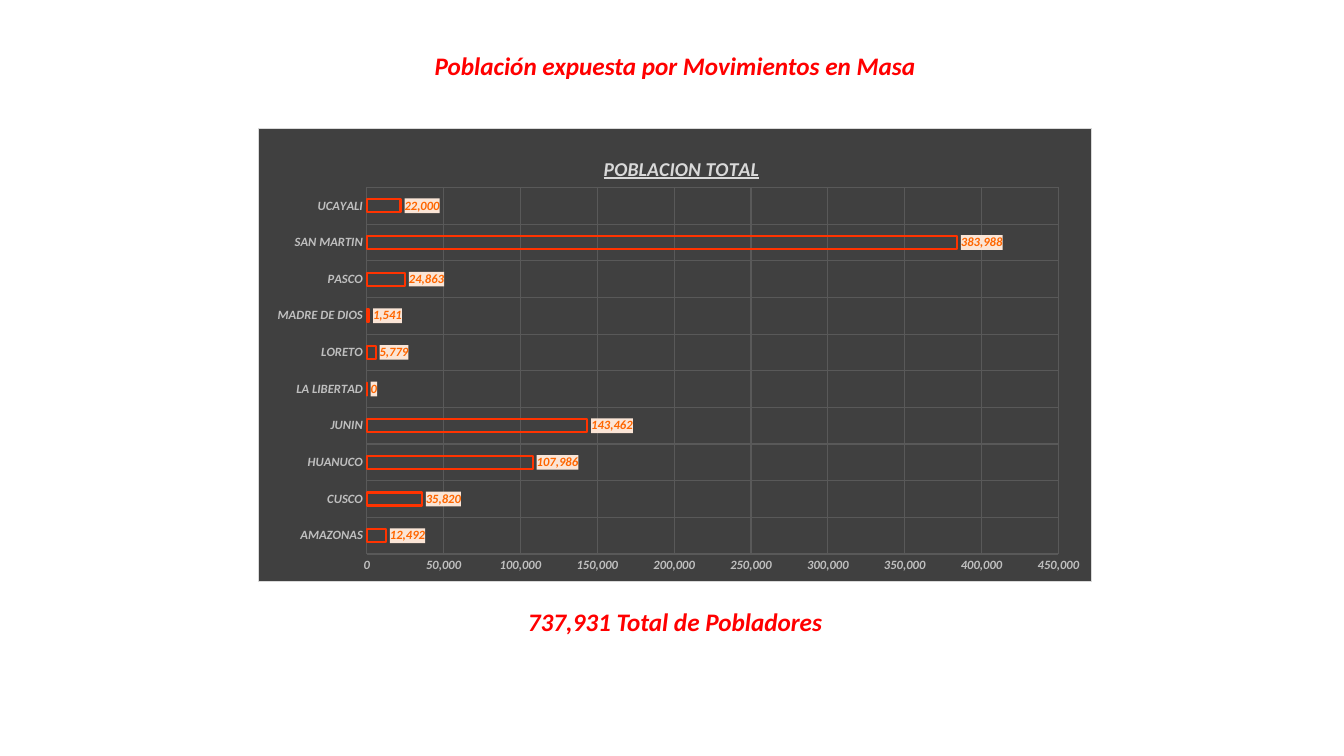
from dataclasses import dataclass

from pptx import Presentation
from pptx.chart.data import CategoryChartData
from pptx.dml.color import RGBColor
from pptx.enum.chart import XL_CHART_TYPE, XL_LABEL_POSITION, XL_TICK_MARK
from pptx.enum.text import MSO_ANCHOR, PP_ALIGN
from pptx.oxml import parse_xml
from pptx.oxml.ns import nsdecls, qn
from pptx.util import Cm, Pt


@dataclass(frozen=True)
class Theme:
    font: str = "Calibri"
    heading: str = "FF0000"
    panel: str = "404040"
    border: str = "D9D9D9"
    grid: str = "595959"
    axis: str = "BFBFBF"
    bar: str = "FF3300"
    label: str = "FF6600"
    label_fill: str = "FBE5D6"
    heading_size: float = 18
    title_size: float = 14
    small_size: float = 9


THEME = Theme()
POPULATION = {
    "AMAZONAS": 12492,
    "CUSCO": 35820,
    "HUANUCO": 107986,
    "JUNIN": 143462,
    "LA LIBERTAD": 0,
    "LORETO": 5779,
    "MADRE DE DIOS": 1541,
    "PASCO": 24863,
    "SAN MARTIN": 383988,
    "UCAYALI": 22000,
}


def style_font(font, size, color):
    font.name = THEME.font
    font.size = Pt(size)
    font.bold = font.italic = True
    font.color.rgb = RGBColor.from_string(color)


def style_line(line, color, width):
    line.color.rgb = RGBColor.from_string(color)
    line.width = Pt(width)


def add_heading(s, text, left, top, width, height):
    tf = s.shapes.add_textbox(left, top, width, height).text_frame
    tf.word_wrap = True
    tf.vertical_anchor = MSO_ANCHOR.MIDDLE
    p = tf.paragraphs[0]
    p.text = text
    p.alignment = PP_ALIGN.CENTER
    style_font(p.runs[0].font, THEME.heading_size, THEME.heading)


def box_properties(fill, border=None):
    """Build the c:spPr of a chart part that has no public fill."""
    line = "<a:ln><a:noFill/></a:ln>"
    if border:
        line = (f'<a:ln w="{Pt(0.75)}"><a:solidFill><a:srgbClr val="{border}"/>'
                "</a:solidFill></a:ln>")
    return parse_xml(
        f'<c:spPr {nsdecls("c", "a")}><a:solidFill><a:srgbClr val="{fill}"/>'
        f"</a:solidFill>{line}</c:spPr>")


def manual_layout(inner=False, **fractions):
    target = '<c:layoutTarget val="inner"/>' if inner else ""
    modes = "".join(f'<c:{k}Mode val="edge"/>' for k in "xy")
    values = "".join(f'<c:{k} val="{v}"/>' for k, v in fractions.items())
    return parse_xml(f'<c:layout {nsdecls("c")}><c:manualLayout>{target}{modes}'
                     f"{values}</c:manualLayout></c:layout>")


def drop_layout(element):
    for layout in element.findall(qn("c:layout")):
        element.remove(layout)


def style_axis(axis):
    axis.has_major_gridlines = True
    style_line(axis.major_gridlines.format.line, THEME.grid, 0.75)
    axis.major_tick_mark = axis.minor_tick_mark = XL_TICK_MARK.NONE
    axis.format.line.fill.background()
    style_font(axis.tick_labels.font, THEME.small_size, THEME.axis)


def style_title(chart, text):
    chart.has_title = True
    title = chart.chart_title
    title.include_in_layout = False
    p = title.text_frame.paragraphs[0]
    p.text = text
    font = p.runs[0].font
    style_font(font, THEME.title_size, THEME.border)
    font.underline = True
    element = title._element
    drop_layout(element)
    element.find(qn("c:tx")).addnext(manual_layout(x=0.41, y=0.05))


def style_bars(plot):
    plot.gap_width = 182
    plot.overlap = -50
    plot.vary_by_categories = False
    bars = plot.series[0]
    bars.format.fill.background()
    style_line(bars.format.line, THEME.bar, 1.5)
    labels = bars.data_labels
    labels.show_value = True
    labels.position = XL_LABEL_POSITION.OUTSIDE_END
    labels.number_format = "#,##0"
    labels.number_format_is_linked = False
    style_font(labels.font, THEME.small_size, THEME.label)
    number_format = labels._element.find(qn("c:numFmt"))
    number_format.addnext(box_properties(THEME.label_fill))


def add_population_chart(s, left, top, width, height):
    data = CategoryChartData(number_format="#,##0")
    data.categories = list(POPULATION)
    data.add_series("Población total", list(POPULATION.values()))
    chart = s.shapes.add_chart(
        XL_CHART_TYPE.BAR_CLUSTERED, left, top, width, height, data).chart
    chart.has_legend = False
    chart.font.name = THEME.font
    chart.font.size = Pt(10)
    style_title(chart, "POBLACION TOTAL")
    style_axis(chart.category_axis)
    style_axis(chart.value_axis)
    value_axis = chart.value_axis
    value_axis.minimum_scale, value_axis.maximum_scale = 0, 450000
    value_axis.major_unit = 50000
    value_axis.tick_labels.number_format = "#,##0"
    value_axis.tick_labels.number_format_is_linked = False
    style_bars(chart.plots[0])

    chart_xml = chart._chartSpace.find(qn("c:chart"))
    chart_xml.addnext(box_properties(THEME.panel, THEME.border))
    plot_area = chart_xml.find(qn("c:plotArea"))
    drop_layout(plot_area)
    plot_area.insert(0, manual_layout(True, x=0.13, y=0.13, w=0.83, h=0.81))


def add_population_slide(prs):
    s = prs.slides.add_slide(prs.slide_layouts[6])
    left, top, width, height = Cm(6.5), Cm(3.23), Cm(21.03), Cm(11.43)
    add_heading(s, "Población expuesta por Movimientos en Masa",
                left, top - Cm(2.08), width, Cm(1.02))
    add_population_chart(s, left, top, width, height)
    add_heading(s, "737,931 Total de Pobladores",
                left, top + height + Cm(0.5), width, Cm(1.02))


def main():
    prs = Presentation()
    prs.slide_width, prs.slide_height = Cm(33.87), Cm(19.05)
    add_population_slide(prs)
    prs.save("out.pptx")


if __name__ == "__main__":
    main()
